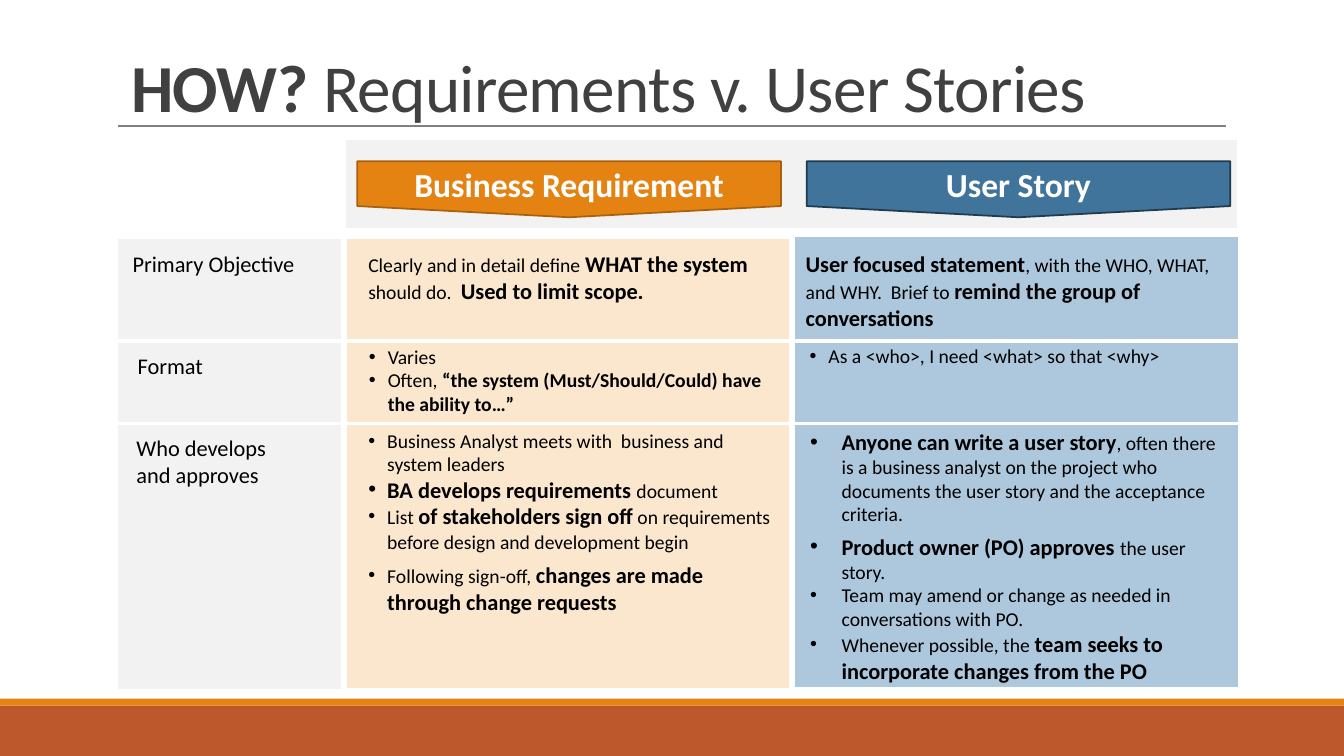
"""Build a slide that compares business requirements with user stories."""
from dataclasses import dataclass

from lxml import etree
from pptx import Presentation
from pptx.dml.color import RGBColor
from pptx.enum.shapes import MSO_CONNECTOR, MSO_SHAPE
from pptx.enum.text import MSO_ANCHOR, MSO_AUTO_SIZE, PP_ALIGN
from pptx.oxml.ns import qn
from pptx.slide import Slide
from pptx.text.text import TextFrame
from pptx.util import Pt

RECT = MSO_SHAPE.RECTANGLE
PANEL = MSO_SHAPE.FLOWCHART_PROCESS
BANNER = MSO_SHAPE.FLOWCHART_OFFPAGE_CONNECTOR
STRAIGHT = MSO_CONNECTOR.STRAIGHT
MIDDLE = MSO_ANCHOR.MIDDLE
GROW = MSO_AUTO_SIZE.SHAPE_TO_FIT_TEXT
LEFT, CENTER = PP_ALIGN.LEFT, PP_ALIGN.CENTER


@dataclass(frozen=True)
class Theme:
    font: str = "Calibri"
    white: str = "FFFFFF"
    black: str = "000000"
    dark: str = "404040"
    gray: str = "808080"
    pale: str = "F2F2F2"
    rust: str = "BD582C"
    orange: str = "E48312"
    brown: str = "A9610D"
    cream: str = "FBE6CE"
    blue: str = "40749B"
    navy: str = "203A4E"
    sky: str = "ADC8DD"
    title: float = 48
    head: float = 24
    large: float = 16
    small: float = 14


T = Theme()


@dataclass(frozen=True)
class Run:
    text: str
    size: float = T.small
    bold: bool = False
    color: str = T.black


@dataclass(frozen=True)
class Para:
    runs: list[Run]
    hang: float = 0
    after: float = 0
    align: PP_ALIGN = LEFT


@dataclass(frozen=True)
class Block:
    kind: MSO_SHAPE
    left: float
    top: float
    width: float
    height: float
    fill: str
    line: str = ""
    weight: float = 1.25
    label: str = ""


@dataclass(frozen=True)
class Rule:
    left: float
    right: float
    top: float
    color: str
    weight: float


@dataclass(frozen=True)
class Note:
    left: float
    top: float
    width: float
    height: float
    paras: list[Para]


def strong(text: str, size: float = T.large) -> Run:
    """Return a bold run."""
    return Run(text, size, True)


def write(frame: TextFrame, paras: list[Para]) -> None:
    """Fill a text frame run by run."""
    for i, para in enumerate(paras):
        line = frame.add_paragraph() if i else frame.paragraphs[0]
        line.alignment = para.align
        line.space_before, line.space_after = Pt(0), Pt(para.after)
        if para.hang:
            props = line._p.get_or_add_pPr()
            props.set("marL", str(Pt(para.hang)))
            props.set("indent", str(-Pt(para.hang)))
            etree.SubElement(props, qn("a:buFont")).set("typeface", "Arial")
            etree.SubElement(props, qn("a:buChar")).set("char", "•")
        for part in para.runs:
            run = line.add_run()
            run.text = part.text
            font = run.font
            font.name, font.size, font.bold = T.font, Pt(part.size), part.bold
            font.color.rgb = RGBColor.from_string(part.color)


def draw_block(slide: Slide, block: Block) -> None:
    """Draw a filled shape with its label."""
    shape = slide.shapes.add_shape(block.kind, Pt(block.left), Pt(block.top),
                                   Pt(block.width), Pt(block.height))
    shape.shadow.inherit = False
    shape.fill.solid()
    shape.fill.fore_color.rgb = RGBColor.from_string(block.fill)
    if block.line:
        shape.line.color.rgb = RGBColor.from_string(block.line)
        shape.line.width = Pt(block.weight)
    else:
        shape.line.fill.background()
    if block.label:
        shape.text_frame.vertical_anchor = MIDDLE
        label = Run(block.label, T.head, True, T.white)
        write(shape.text_frame, [Para([label], align=CENTER)])


def draw_rule(slide: Slide, rule: Rule) -> None:
    """Draw a level line."""
    line = slide.shapes.add_connector(STRAIGHT, Pt(rule.left), Pt(rule.top),
                                      Pt(rule.right), Pt(rule.top))
    line.line.color.rgb = RGBColor.from_string(rule.color)
    line.line.width = Pt(rule.weight)
    etree.SubElement(line._element.spPr, qn("a:effectLst"))


def draw_note(slide: Slide, note: Note) -> None:
    """Draw a wrapped text box."""
    box = slide.shapes.add_textbox(Pt(note.left), Pt(note.top),
                                   Pt(note.width), Pt(note.height))
    box.text_frame.word_wrap = True
    box.text_frame.auto_size = GROW
    write(box.text_frame, note.paras)


def set_title(slide: Slide) -> None:
    """Place and format the title."""
    title = slide.shapes.title
    title.left, title.top = Pt(86.4), Pt(34)
    title.width, title.height = Pt(792), Pt(63)
    title.text_frame.vertical_anchor = MIDDLE
    write(title.text_frame, [Para([
        Run("HOW? ", T.title, True, T.dark),
        Run("Requirements v. User Stories", T.title, False, T.dark)])])
    line = title.text_frame.paragraphs[0]
    line.line_spacing = 0.85
    for run in line.runs:
        run._r.get_or_add_rPr().set("spc", "-50")


BLOCKS = [
    Block(RECT, 0, 504, 960, 36, T.rust),
    Block(RECT, 0, 499, 960, 5, T.orange),
    Block(PANEL, 84.6, 170.6, 158.8, 321.8, T.pale),
    Block(PANEL, 246.6, 99.6, 637.6, 63.4, T.pale, T.white, 1),
    Block(BANNER, 255.2, 115.2, 302.6, 40, T.orange, T.brown,
          label="Business Requirement"),
    Block(PANEL, 247.6, 170, 316.8, 322, T.cream, T.white),
    Block(BANNER, 576.2, 115.2, 302.6, 40, T.blue, T.navy, label="User Story"),
    Block(PANEL, 567.6, 169, 317.6, 322, T.sky, T.white),
]
RULES = [
    Rule(84, 876, 90, T.gray, 1.5),
    Rule(73.6, 887, 302.4, T.white, 2.25),
    Rule(74, 887.6, 243.6, T.white, 2.25),
]
NOTES = [
    Note(87.6, 175, 157, 26.6, [Para([Run("Primary Objective", T.large)])]),
    Note(91.2, 247.8, 120, 26.6, [Para([Run("Format", T.large)])]),
    Note(90.4, 306.4, 120, 46, [Para([Run("Who develops and approves", T.large)])]),
    Note(256, 175, 292.6, 46, [Para([
        Run("Clearly and in detail define "), strong("WHAT the system "),
        Run("should do.  "), strong("Used to limit scope.")])]),
    Note(568.4, 175, 316.8, 65.4, [Para([
        strong("User focused statement"),
        Run(", with the WHO, WHAT, and WHY.  Brief to "),
        strong("remind the group of conversations")])]),
    Note(256.4, 242.6, 306, 58.2, [
        Para([Run("Varies")], 13.5),
        Para([Run("Often, "),
              strong("“the system (Must/Should/Could) have the ability to…”",
                     T.small)], 13.5)]),
    Note(571.2, 242, 306, 24.2, [
        Para([Run("As a <who>, I need <what> so that <why>")], 13.5)]),
    Note(256, 302.6, 306, 142, [
        Para([Run("Business Analyst meets with  business and system leaders")], 13.5),
        Para([strong("BA develops requirements "), Run("document")], 13.5),
        Para([Run("List "), strong("of stakeholders sign off"),
              Run(" on requirements before design and development begin")], 13.5, 6),
        Para([Run("Following sign-off, "),
              strong("changes are made through change requests")], 13.5, 6)]),
    Note(571.6, 302.4, 304, 191.6, [
        Para([strong("Anyone can write a user story"),
              Run(", often there is a business analyst on the project who "
                  "documents the user story and the acceptance criteria.")], 22.5, 5),
        Para([strong("Product owner (PO) approves "), Run("the user story.")], 22.5),
        Para([Run("Team may amend or change as needed in conversations with PO.")], 22.5),
        Para([Run("Whenever possible, the "),
              strong("team seeks to incorporate changes from the PO")], 22.5)]),
]


def main() -> None:
    """Build and save the slide."""
    deck = Presentation()
    deck.slide_width, deck.slide_height = Pt(960), Pt(540)
    slide = deck.slides.add_slide(deck.slide_layouts[5])
    set_title(slide)
    for block in BLOCKS:
        draw_block(slide, block)
    for rule in RULES:
        draw_rule(slide, rule)
    for note in NOTES:
        draw_note(slide, note)
    deck.save("out.pptx")


if __name__ == "__main__":
    main()
